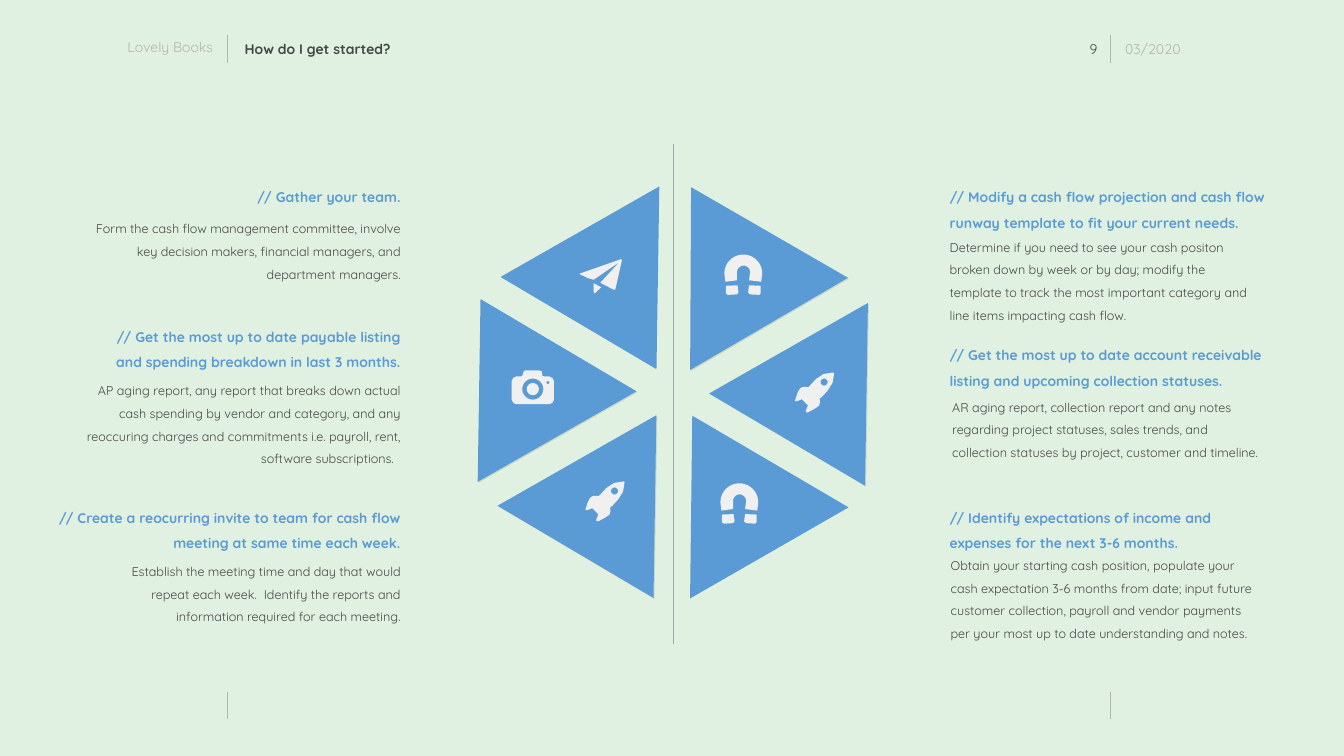
import math
import lxml.etree
import pptx
import pptx.dml.color
import pptx.enum.shapes
import pptx.enum.text
import pptx.oxml.ns
import pptx.util

Cm = pptx.util.Cm
Pt = pptx.util.Pt
qn = pptx.oxml.ns.qn
SubElement = lxml.etree.SubElement
Kind = pptx.enum.shapes.MSO_SHAPE
Align = pptx.enum.text.PP_ALIGN
BLUE, DARK, GREY, PALE = "5B9BD5", "464646", "B4B4B4", "F0F0F0"
rgb = pptx.dml.color.RGBColor.from_string


def write(box, text, size, color, bold=False, align=Align.LEFT, space=1.0):
    frame = box.text_frame
    frame.word_wrap = True
    frame.auto_size = pptx.enum.text.MSO_AUTO_SIZE.NONE
    frame.vertical_anchor = pptx.enum.text.MSO_ANCHOR.TOP
    frame.text = text
    para = frame.paragraphs[0]
    para.alignment = align
    para.line_spacing = space
    para.space_before = Pt(0)
    font = para.runs[0].font
    font.name, font.size, font.bold = "Quicksand", Pt(size), bold
    font.color.rgb = rgb(color)


def arc(x, y, r, start=0, end=360):
    turns = [math.radians(start + (end - start) * i / 24) for i in range(25)]
    return [(x + r * math.cos(a), y + r * math.sin(a)) for a in turns]


deck = pptx.Presentation()
deck.slide_width, deck.slide_height = Cm(67.72), Cm(38.1)
slide = deck.slides.add_slide(deck.slide_layouts[5])
slide.background.fill.solid()
slide.background.fill.fore_color.rgb = rgb("E1F1E1")
shapes = slide.shapes

# Header
title = shapes.title
title.left, title.top, title.width, title.height = Cm(12.07), Cm(1.9), Cm(9.3), Cm(1.12)
write(title, "How do I get started?", 20, DARK, bold=True)
for text, x, y, wide, color, align in [
    ("Lovely Books", 1.68, 1.8, 9.3, GREY, Align.RIGHT),
    ("9", 53.49, 1.78, 2.31, DARK, Align.RIGHT),
    ("03/2020", 56.44, 1.9, 9.3, GREY, Align.LEFT),
]:
    box = shapes.add_textbox(Cm(x), Cm(y), Cm(wide), Cm(1.12))
    write(box, text, 20, color, align=align)
    if text == "9":
        frame = box.text_frame
        frame.margin_left = frame.margin_right = Cm(0.51)
        frame.margin_top = frame.margin_bottom = Cm(0.25)

# Rules at the margins and down the centre
rules = [(x, top, end, GREY) for x in (11.43, 55.96)
         for top, end in ((1.75, 3.15), (34.85, 36.22))]
for x, top, end, color in rules + [(33.91, 7.24, 32.46, "A5A5A5")]:
    line = shapes.add_connector(
        pptx.enum.shapes.MSO_CONNECTOR.STRAIGHT, Cm(x), Cm(top), Cm(x), Cm(end))
    line.line.color.rgb = rgb(color)
    line.line.width = Pt(0.75)
    SubElement(line._element.spPr, qn("a:effectLst"))

# Ring of triangles
up, down = Kind.FLOWCHART_EXTRACT, Kind.FLOWCHART_MERGE
for kind, x, y, turn, shade in [
    (up, 32.21, 11.18, 210, True),
    (down, 37.13, 14.71, 210.6, True),
    (up, 32.23, 22.71, 210.4, False),
    (up, 26.47, 20.37, 30.6, True),
    (down, 21.54, 16.84, 30.6, True),
    (up, 26.62, 8.84, 30.6, False),
]:
    wedge = shapes.add_shape(kind, Cm(x), Cm(y), Cm(9.13), Cm(8))
    wedge.rotation = turn
    wedge.fill.solid()
    wedge.fill.fore_color.rgb = rgb(BLUE)
    wedge.line.fill.background()
    wedge.shadow.inherit = False
    if shade:
        effect = wedge._element.spPr.find(qn("a:effectLst"))
        cast = SubElement(effect, qn("a:outerShdw"), blurRad="0", dist="25400",
                          dir="2700000", algn="tl", rotWithShape="0")
        tint = SubElement(cast, qn("a:srgbClr"), val="000000")
        SubElement(tint, qn("a:alpha"), val="10000")

# Icon outlines, in hundredths of an inch
magnet = [
    [(47, 75), (51, 79), (69, 80), (72, 77), (72, 62), (49, 61)],
    [(3, 62), (3, 77), (7, 80), (25, 79), (28, 75), (26, 61)],
    [(0, 38), (2, 54), (25, 51)] + arc(38, 35, 13, 180, 360)
    + [(49, 51), (73, 54), (75, 38)] + arc(37.5, 37.5, 37.5, 360, 180),
]
camera = [
    [(9, 12), (18, 12), (21, 11), (24, 2), (27, 0), (55, 0), (60, 2), (61, 11),
     (66, 12), (75, 12), (81, 15), (84, 21), (84, 58), (81, 64), (75, 67),
     (9, 67), (3, 64), (0, 58), (0, 21), (3, 15)],
    arc(42, 37, 21), arc(42, 37, 12), arc(72, 24, 3),
]
rocket = [
    [(51, 56), (56, 52), (67, 40), (77, 24), (80, 5), (78, 4), (59, 7), (44, 17),
     (29, 33), (18, 32.5), (12, 36), (7, 45), (2, 61), (6, 61), (16, 57), (28, 69),
     (24, 79), (24, 83), (28, 83), (41, 76), (50, 70), (52, 63)],
    arc(60, 23, 7),
]
plane = [
    [(81, 2), (1, 30), (1, 31), (18, 39), (29, 42), (80, 7), (44, 46), (42, 47),
     (44, 49), (67, 61), (70, 62), (72, 61), (85, 3), (83, 1)],
    [(29, 67), (31, 69), (44, 57), (29, 49)],
]
for paths, x, y in [
    (magnet, 36.5, 12.83), (camera, 25.78, 18.67), (rocket, 40, 18.67),
    (plane, 29.18, 13.03), (magnet, 36.3, 24.36), (rocket, 29.44, 24.16),
]:
    pen = None
    for path in paths:
        dots = [(a * 10, b * 10) for a, b in path]
        if pen is None:
            pen = shapes.build_freeform(*dots[0], scale=Cm(2.54) / 1000)
        else:
            pen.move_to(*dots[0])
        pen.add_line_segments(dots[1:], close=True)
    icon = pen.convert_to_shape(Cm(x), Cm(y))
    icon.fill.solid()
    icon.fill.fore_color.rgb = rgb(PALE)
    icon.line.fill.background()
    icon.shadow.inherit = False

# Steps: heading and body, each as text, left, top, width and height
edge = 20.44
steps = [
    (Align.RIGHT,
     ("// Gather your team.", edge - 12.01, 8.97, 12.01, 1.37),
     ("Form the cash flow management committee, involve key decision makers, "
      "financial managers, and department managers.", edge - 16.33, 10.64, 16.33, 3.58)),
    (Align.RIGHT,
     ("// Get the most up to date payable listing and spending breakdown in last "
      "3 months.", edge - 15.19, 16, 15.19, 2.67),
     ("AP aging report, any report that breaks down actual cash spending by vendor and "
      "category, and any reoccuring charges and commitments i.e. payroll, rent, "
      "software subscriptions.  ", edge - 16.33, 18.8, 16.33, 4.72)),
    (Align.RIGHT,
     ("// Create a reocurring invite to team for cash flow meeting at same time each "
      "week.", edge - 18.21, 25.12, 18.21, 2.67),
     ("Establish the meeting time and day that would repeat each week.  Identify the "
      "reports and information required for each meeting.",
      edge - 15.19, 27.91, 15.19, 3.58)),
    (Align.LEFT,
     ("// Modify a cash flow projection and cash flow runway template to fit your "
      "current needs.", 47.6, 8.97, 16.54, 2.67),
     ("Determine if you need to see your cash positon broken down by week or by day; "
      "modify the template to track the most important category and line items "
      "impacting cash flow.", 47.6, 11.56, 16.05, 4.72)),
    (Align.LEFT,
     ("// Get the most up to date account receivable listing and upcoming collection "
      "statuses.", 47.6, 16.94, 16.54, 2.67),
     ("AR aging report, collection report and any notes regarding project statuses, "
      "sales trends, and collection statuses by project, customer and timeline.",
      47.73, 19.63, 16.05, 4.72)),
    (Align.LEFT,
     ("// Identify expectations of income and expenses for the next 3-6 months.",
      47.6, 25.12, 14.86, 2.67),
     ("Obtain your starting cash position, populate your cash expectation 3-6 months "
      "from date; input future customer collection, payroll and vendor payments per "
      "your most up to date understanding and notes.", 47.65, 27.61, 16.05, 5.89)),
]
for align, head, body in steps:
    for part, size, color, bold in ((head, 20, BLUE, True), (body, 18, DARK, False)):
        text, *place = part
        box = shapes.add_textbox(*[Cm(n) for n in place])
        write(box, text, size, color, bold, align, 1.5)

deck.save("out.pptx")
